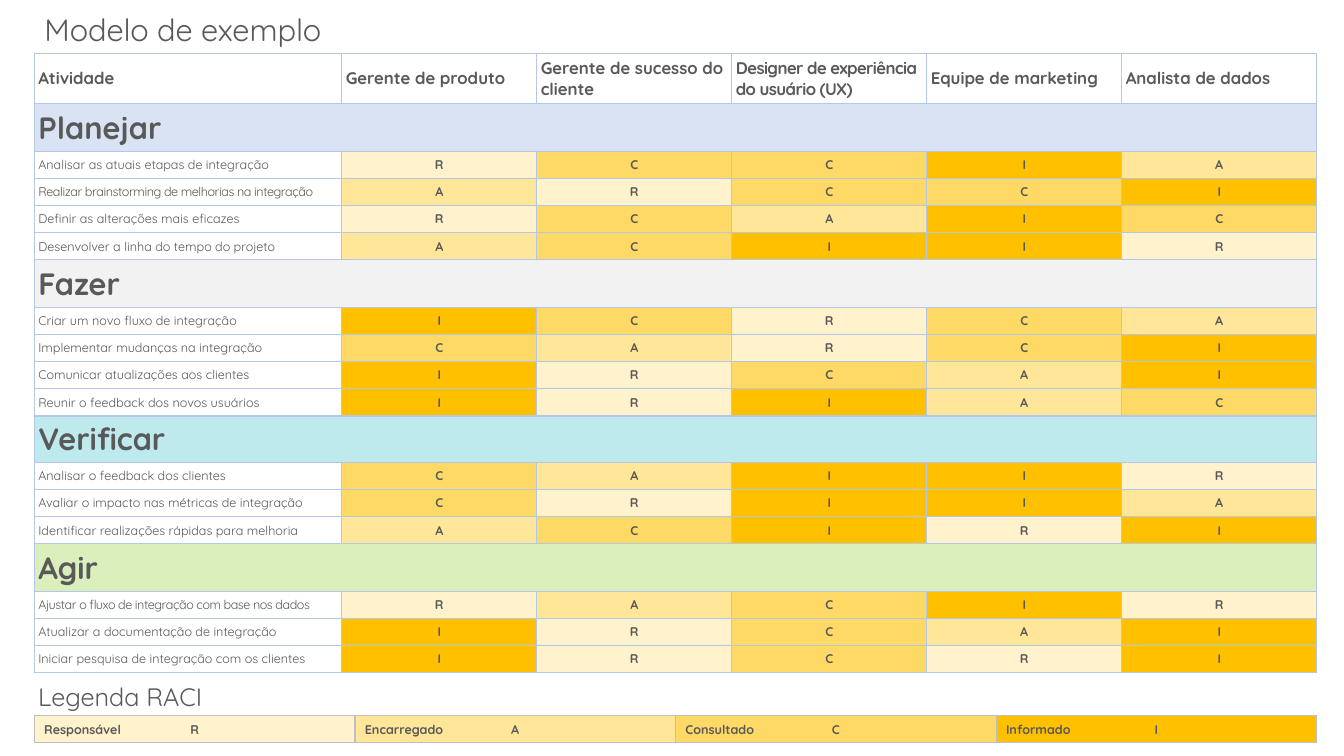
from pptx import Presentation
from pptx.dml.color import RGBColor as Rgb
from pptx.enum.text import MSO_ANCHOR as Anchor, MSO_AUTO_SIZE as Auto, PP_ALIGN as Align
from pptx.oxml import parse_xml as to_xml
from pptx.oxml.ns import nsdecls
from pptx.util import Inches, Pt

RACI = {"R": "FFF2CC", "A": "FFE699", "C": "FFD966", "I": "FFC000"}
ROLES = ["Gerente de produto", "Gerente de sucesso do cliente",
         "Designer de experiência do usuário (UX)",
         "Equipe de marketing", "Analista de dados"]
STAGES = [
    ("Planejar", "DAE3F3", 4.7, [
        ("Analisar as atuais etapas de integração", "RCCIA"),
        ("Realizar brainstorming de melhorias na integração", "ARCCI"),
        ("Definir as alterações mais eficazes", "RCAIC"),
        ("Desenvolver a linha do tempo do projeto", "ACIIR")]),
    ("Fazer", "F2F2F2", 4.7, [
        ("Criar um novo fluxo de integração", "ICRCA"),
        ("Implementar mudanças na integração", "CARCI"),
        ("Comunicar atualizações aos clientes", "IRCAI"),
        ("Reunir o feedback dos novos usuários", "IRIAC")]),
    ("Verificar", "BFEAED", 4.6, [
        ("Analisar o feedback dos clientes", "CAIIR"),
        ("Avaliar o impacto nas métricas de integração", "CRIIA"),
        ("Identificar realizações rápidas para melhoria", "ACIRI")]),
    ("Agir", "DAEFBB", 4.7, [
        ("Ajustar o fluxo de integração com base nos dados", "RACIR"),
        ("Atualizar a documentação de integração", "IRCAI"),
        ("Iniciar pesquisa de integração com os clientes", "IRCRI")]),
]
TIGHT = {ROLES[2]: -40, STAGES[0][3][1][0]: -30, STAGES[3][3][0][0]: -30}
LEGEND = ["Responsável", "Encarregado", "Consultado", "Informado"]

HEAD = {"size": Pt(12), "bold": True}
STAGE = {"size": Pt(22), "bold": True}
TASK = {"size": Pt(9), "bold": False}
MARK = {"size": Pt(9), "bold": True}
TITLE = {"size": Pt(22), "bold": False}
LABEL = {"size": Pt(18), "bold": False}

LEFT, LINE, STEP = 3.4, 2.7, 31.8


def hue(code):
    return Rgb.from_string(code)


def put(item, fmt):
    for name, value in fmt.items():
        setattr(item, name, value)


class Board:
    face = "Quicksand"
    ink = "595959"

    def __init__(self, deck):
        self.unit = Inches(0.1)
        self.slide = deck.slides.add_slide(deck.slide_layouts[5])

    def grid(self, *cells):
        return [round(n * self.unit) for n in cells]

    def label(self, frame, text, fmt, align=Align.LEFT):
        para = frame.paragraphs[0]
        para.alignment = align
        run = para.add_run()
        run.text = text
        put(run.font, {"name": self.face, **fmt})
        run.font.color.rgb = hue(self.ink)
        if text in TIGHT:
            run.font._element.set("spc", str(TIGHT[text]))

    def title(self, text, box):
        shape = self.slide.shapes.title
        put(shape, dict(zip(("left", "top", "width", "height"), self.grid(*box))))
        self.fit(shape.text_frame)
        self.label(shape.text_frame, text, TITLE)

    def note(self, text, box, fmt):
        frame = self.slide.shapes.add_textbox(*self.grid(*box)).text_frame
        self.fit(frame)
        self.label(frame, text, fmt)

    def fit(self, frame):
        put(frame, {"word_wrap": True, "auto_size": Auto.SHAPE_TO_FIT_TEXT,
                    "vertical_anchor": Anchor.TOP})

    def table(self, spot, cols, rows):
        box = self.grid(*spot, sum(cols), sum(rows))
        table = self.slide.shapes.add_table(len(rows), len(cols), *box).table
        put(table, {"first_row": False, "horz_banding": False})
        for col, width in zip(table.columns, self.grid(*cols)):
            col.width = width
        for row, height in zip(table.rows, self.grid(*rows)):
            row.height = height
        return table

    def cell(self, cell, edge, fill=None):
        props = cell._tc.get_or_add_tcPr()
        for side in "LRTB":
            props.append(to_xml(
                f'<a:ln{side} {nsdecls("a")} w="12700"><a:solidFill>'
                f'<a:srgbClr val="{edge}"/></a:solidFill></a:ln{side}>'))
        pad = Inches(0.04)
        put(cell, {"margin_left": pad, "margin_right": pad, "margin_top": pad,
                   "margin_bottom": pad, "vertical_anchor": Anchor.MIDDLE})
        if fill:
            cell.fill.solid()
            cell.fill.fore_color.rgb = hue(fill)
        else:
            cell.fill.background()

    def mark(self, cell, key, edge):
        self.cell(cell, edge, RACI[key])
        self.label(cell.text_frame, key, MARK, Align.CENTER)

    def matrix(self, edge="B4C7E7"):
        rows = [5]
        for _, _, tall, tasks in STAGES:
            rows += [tall] + [LINE] * len(tasks)
        table = self.table((LEFT, 5.3), [30.5] + [19.34] * len(ROLES), rows)
        for col, text in enumerate(["Atividade"] + ROLES):
            cell = table.cell(0, col)
            self.cell(cell, edge)
            self.label(cell.text_frame, text, HEAD)
            if text in TIGHT:
                cell.margin_right = Inches(0.02)
        row = 1
        for name, fill, _, tasks in STAGES:
            for col in range(len(ROLES) + 1):
                self.cell(table.cell(row, col), edge, fill)
            band = table.cell(row, 0)
            band.merge(table.cell(row, len(ROLES)))
            self.label(band.text_frame, name, STAGE)
            for row, (task, keys) in enumerate(tasks, row + 1):
                self.cell(table.cell(row, 0), edge)
                self.label(table.cell(row, 0).text_frame, task, TASK)
                for col, key in enumerate(keys, 1):
                    self.mark(table.cell(row, col), key, edge)
            row += 1

    def legend(self, edge="BFBFBF"):
        table = self.table((LEFT, 71), [STEP] * len(RACI), [LINE])
        for col, (key, text) in enumerate(zip(RACI, LEGEND)):
            self.mark(table.cell(0, col), key, edge)
            self.note(text, (LEFT + col * STEP, 71.1, 31.6, 2.5), MARK)


def main():
    deck = Presentation()
    put(deck, {"slide_width": Inches(13.33), "slide_height": Inches(7.5)})
    board = Board(deck)
    board.title("Modelo de exemplo", (LEFT, 0.6, 51.4, 4.7))
    board.matrix()
    board.legend()
    board.note("Legenda RACI", (2.8, 67.1, 51.4, 4), LABEL)
    deck.save("out.pptx")


if __name__ == "__main__":
    main()
